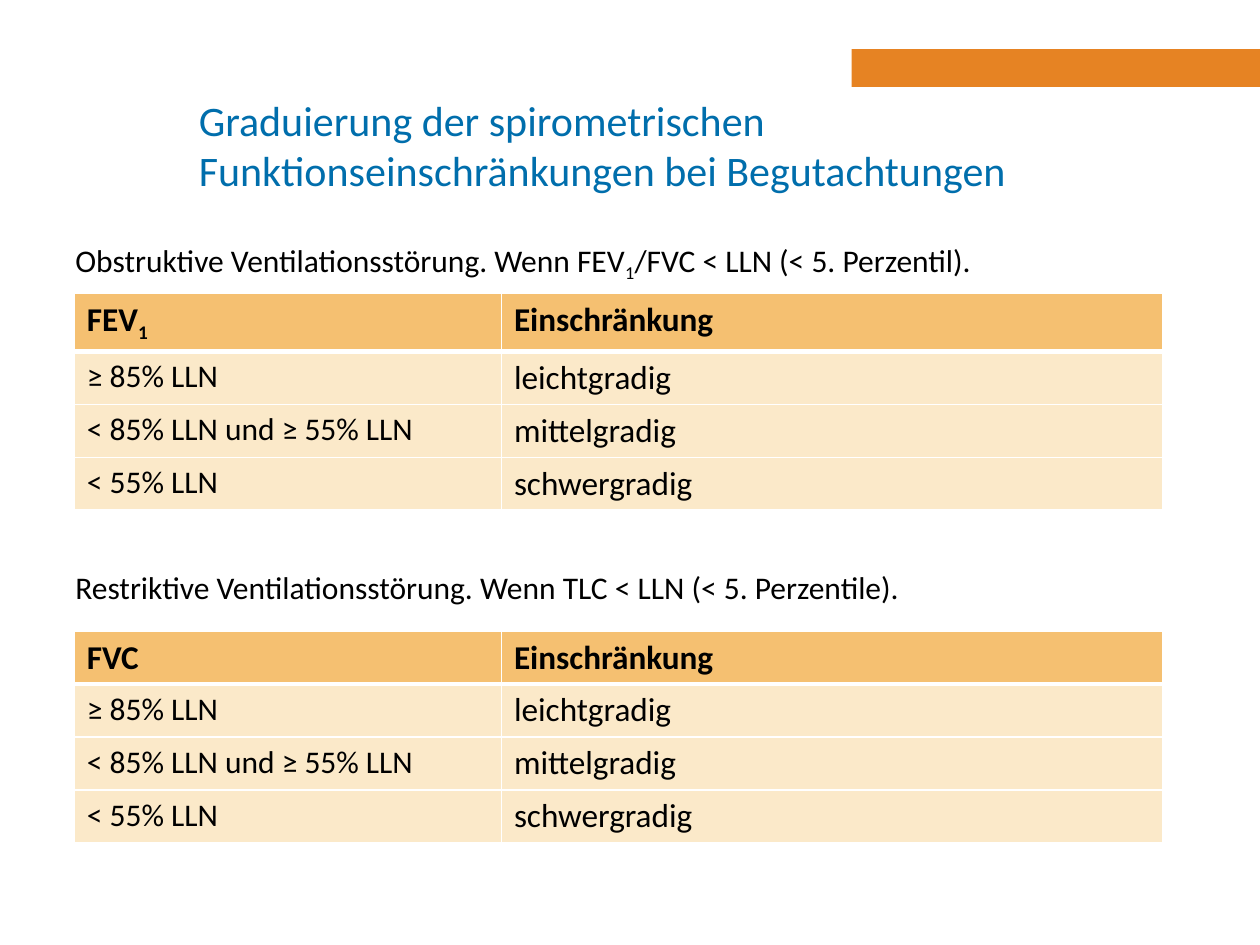
from dataclasses import dataclass

from lxml.etree import SubElement
from pptx import Presentation
from pptx.dml.color import RGBColor
from pptx.enum.shapes import MSO_SHAPE
from pptx.enum.text import MSO_ANCHOR
from pptx.oxml.ns import qn
from pptx.util import Inches, Pt


@dataclass(frozen=True)
class Theme:
    """Colours, font and type sizes of the slide."""

    font: str = "Calibri"
    accent: str = "E68323"
    title: str = "006EAC"
    text: str = "000000"
    header: str = "F5C071"
    body: str = "FBE9C9"
    border: str = "FFFFFF"
    title_size: int = 24
    text_size: int = 18
    label_size: int = 19
    thin: int = 1
    thick: int = 3


@dataclass(frozen=True)
class Grading:
    """A caption and its grading table; caption and measure are split into spans."""

    caption: tuple[str, ...]
    caption_top: float
    measure: tuple[str, ...]
    table_top: float
    header_height: float


THEME = Theme()
LEFT = 0.59
COLUMN_WIDTHS = (3.39, 5.25)
ROW_HEIGHT = 0.42
GRADES = (
    ("≥ 85% LLN", "leichtgradig"),
    ("< 85% LLN und ≥ 55% LLN", "mittelgradig"),
    ("< 55% LLN", "schwergradig"),
)
GRADINGS = (
    Grading(
        ("Obstruktive Ventilationsstörung. Wenn FEV", "1", "/FVC < LLN (< 5. Perzentil)."),
        1.86, ("FEV", "1"), 2.33, 0.45,
    ),
    Grading(
        ("Restriktive Ventilationsstörung. Wenn TLC < LLN (< 5. Perzentile).",),
        4.46, ("FVC",), 5.01, 0.42,
    ),
)


def write_spans(frame, spans: tuple[str, ...], size: int, color: str, bold: bool = False) -> None:
    """Write spans into the first paragraph, lowering every second one to a subscript."""
    paragraph = frame.paragraphs[0]
    for index, text in enumerate(spans):
        span = paragraph.add_run()
        span.text = text
        span.font.name = THEME.font
        span.font.size = Pt(size)
        span.font.bold = bold
        span.font.color.rgb = RGBColor.from_string(color)
        if index % 2:
            span._r.get_or_add_rPr().set("baseline", "-25000")


def add_text(page, left: float, top: float, width: float, height: float,
             spans: tuple[str, ...], size: int, color: str, anchor=MSO_ANCHOR.TOP) -> None:
    """Add a wrapping text box."""
    box = page.shapes.add_textbox(Inches(left), Inches(top), Inches(width), Inches(height))
    frame = box.text_frame
    frame.word_wrap = True
    frame.vertical_anchor = anchor
    write_spans(frame, spans, size, color)


def add_accent_bar(page) -> None:
    """Add the coloured bar at the upper right."""
    bar = page.shapes.add_shape(
        MSO_SHAPE.RECTANGLE, Inches(6.76), Inches(0.39), Inches(3.24), Inches(0.3))
    bar.shadow.inherit = False
    bar.fill.solid()
    bar.fill.fore_color.rgb = RGBColor.from_string(THEME.accent)
    bar.line.fill.background()


def set_borders(cell, top: int, bottom: int) -> None:
    """Draw the four borders of a cell."""
    properties = cell._tc.get_or_add_tcPr()
    widths = {"a:lnL": THEME.thin, "a:lnR": THEME.thin, "a:lnT": top, "a:lnB": bottom}
    for tag, width in widths.items():
        line = SubElement(properties, qn(tag), w=str(Pt(width)))
        SubElement(SubElement(line, qn("a:solidFill")), qn("a:srgbClr"), val=THEME.border)


def add_grading(page, grading: Grading) -> None:
    """Add a caption with its grading table."""
    add_text(page, 0.5, grading.caption_top, 9, 0.41, grading.caption,
             THEME.text_size, THEME.text)
    rows = [(grading.measure, ("Einschränkung",))]
    rows += [((limit,), (grade,)) for limit, grade in GRADES]
    height = grading.header_height + ROW_HEIGHT * len(GRADES)
    table = page.shapes.add_table(
        len(rows), len(COLUMN_WIDTHS), Inches(LEFT), Inches(grading.table_top),
        Inches(sum(COLUMN_WIDTHS)), Inches(height)).table
    for column, width in zip(table.columns, COLUMN_WIDTHS):
        column.width = Inches(width)
    for row_index, row in enumerate(rows):
        is_header = row_index == 0
        table.rows[row_index].height = Inches(grading.header_height if is_header else ROW_HEIGHT)
        for column_index, spans in enumerate(row):
            cell = table.cell(row_index, column_index)
            is_label = is_header or column_index == 1
            write_spans(cell.text_frame, spans,
                        THEME.label_size if is_label else THEME.text_size,
                        THEME.text, is_header)
            set_borders(cell, THEME.thick if row_index == 1 else THEME.thin,
                        THEME.thick if is_header else THEME.thin)
            cell.fill.solid()
            cell.fill.fore_color.rgb = RGBColor.from_string(
                THEME.header if is_header else THEME.body)


def main() -> None:
    """Build and save the slide."""
    deck = Presentation()
    deck.slide_width, deck.slide_height = Inches(10), Inches(7.5)
    page = deck.slides.add_slide(deck.slide_layouts[6])
    add_accent_bar(page)
    add_text(page, 1.48, 0.68, 7.07, 0.94,
             ("Graduierung der spirometrischen Funktionseinschränkungen bei Begutachtungen",),
             THEME.title_size, THEME.title, MSO_ANCHOR.MIDDLE)
    for grading in GRADINGS:
        add_grading(page, grading)
    deck.save("out.pptx")


if __name__ == "__main__":
    main()
